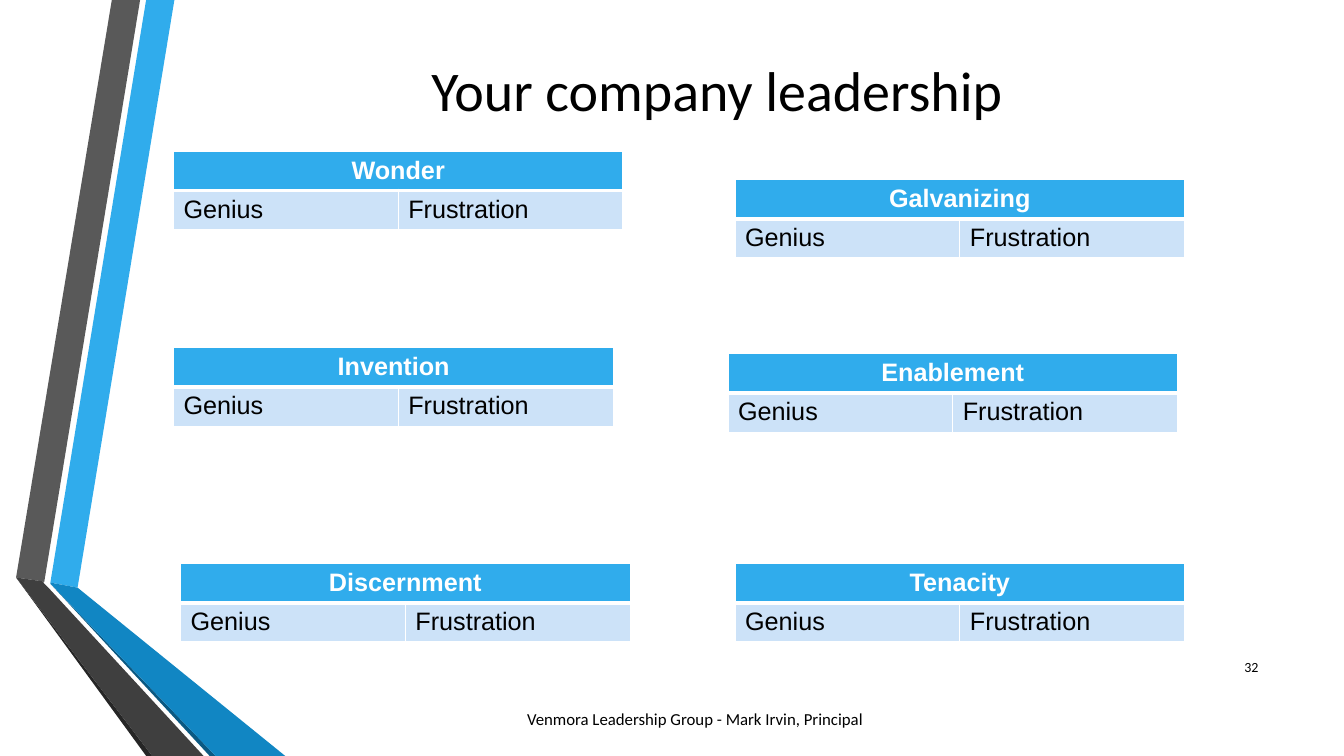
from lxml import etree
from pptx import Presentation
from pptx.dml.color import RGBColor
from pptx.enum.text import MSO_ANCHOR, PP_ALIGN
from pptx.oxml.ns import qn
from pptx.util import Inches, Pt

LEFT, CENTER, RIGHT = PP_ALIGN.LEFT, PP_ALIGN.CENTER, PP_ALIGN.RIGHT
MIDDLE = MSO_ANCHOR.MIDDLE

# Content
BLACK, WHITE = "000000", "FFFFFF"
HEADER_FILL, CELL_FILL = "30ACEC", "CCE2F8"
ROW_HEIGHT, COLUMN_WIDTH = 0.39, 2.23
COLUMN_LABELS = ("Genius", "Frustration")

# Ribbon colour, outline points
RIBBONS = [
    ("30ACEC", [(0.5, 5.78), (0.77, 5.83), (1.73, 0), (1.45, 0)]),
    ("595959", [(1.39, 0), (1.11, 0), (0.16, 5.73), (0.44, 5.77)]),
    ("262626", [(0.16, 5.73), (1.45, 7.5), (1.51, 7.5)]),
    ("0B5982", [(0.5, 5.79), (2.08, 7.5), (2.14, 7.5)]),
    ("1186C3", [(0.5, 5.79), (2.14, 7.5), (2.83, 7.5), (0.77, 5.83), (0.5, 5.78)]),
    ("3F3F3F", [(2.02, 7.5), (0.48, 5.83), (0.43, 5.78), (0.44, 5.77),
                (0.16, 5.73), (1.51, 7.5)]),
]

# Heading, left, top, width of the second column
TABLES = [
    ("Wonder", 1.72, 1.5, COLUMN_WIDTH),
    ("Invention", 1.72, 3.45, 2.14),
    ("Discernment", 1.79, 5.59, COLUMN_WIDTH),
    ("Galvanizing", 7.29, 1.78, COLUMN_WIDTH),
    ("Enablement", 7.22, 3.51, COLUMN_WIDTH),
    ("Tenacity", 7.29, 5.59, COLUMN_WIDTH),
]

# Text, left, top, width, height, size, alignment
LABELS = [
    ("Your company leadership", 1.63, 0.38, 10.96, 1, 40, CENTER),
    ("Venmora Leadership Group - Mark Irvin, Principal", 3.02, 6.93, 7.75, 0.4, 12, CENTER),
    ("32", 11.98, 6.42, 0.6, 0.4, 10, RIGHT),
]


def color(hex_code):
    return RGBColor.from_string(hex_code)


def write(frame, text, size, font, hex_code, align, bold=False):
    para = frame.paragraphs[0]
    para.text = text
    para.alignment = align
    para.font.size = Pt(size)
    para.font.name = font
    para.font.bold = bold
    para.font.color.rgb = color(hex_code)


def add_ribbon(page, fill, points):
    corners = [(Inches(x), Inches(y)) for x, y in points]
    builder = page.shapes.build_freeform(*corners[0])
    builder.add_line_segments(corners[1:], close=True)
    ribbon = builder.convert_to_shape()
    ribbon.fill.solid()
    ribbon.fill.fore_color.rgb = color(fill)
    ribbon.line.fill.background()
    ribbon.shadow.inherit = False


def style_cell(cell, fill, top, bottom):
    properties = cell._tc.get_or_add_tcPr()
    for side, points in (("L", 1), ("R", 1), ("T", top), ("B", bottom)):
        line = etree.SubElement(properties, qn(f"a:ln{side}"), w=str(Pt(points)))
        solid = etree.SubElement(line, qn("a:solidFill"))
        etree.SubElement(solid, qn("a:srgbClr"), val=WHITE)
    cell.fill.solid()
    cell.fill.fore_color.rgb = color(fill)


def add_genius_table(page, heading, left, top, last_width):
    widths = (COLUMN_WIDTH, last_width)
    frame = page.shapes.add_table(2, 2, Inches(left), Inches(top),
                                  Inches(sum(widths)), Inches(2 * ROW_HEIGHT))
    table = frame.table
    for row in table.rows:
        row.height = Inches(ROW_HEIGHT)
    for index, (width, label) in enumerate(zip(widths, COLUMN_LABELS)):
        table.columns[index].width = Inches(width)
        style_cell(table.cell(0, index), HEADER_FILL, 1, 3)
        cell = table.cell(1, index)
        style_cell(cell, CELL_FILL, 3, 1)
        write(cell.text_frame, label, 18, "Arial", BLACK, LEFT)
    header = table.cell(0, 0)
    header.merge(table.cell(0, 1))
    write(header.text_frame, heading, 18, "Arial", WHITE, CENTER, bold=True)


def add_label(page, text, left, top, width, height, size, align):
    box = page.shapes.add_textbox(Inches(left), Inches(top), Inches(width), Inches(height))
    frame = box.text_frame
    frame.word_wrap = True
    frame.vertical_anchor = MIDDLE
    write(frame, text, size, "Calibri", BLACK, align)


def main():
    deck = Presentation()
    deck.slide_width, deck.slide_height = Inches(13.33), Inches(7.5)
    page = deck.slides.add_slide(deck.slide_layouts[6])
    page.background.fill.solid()
    page.background.fill.fore_color.rgb = color(WHITE)

    for ribbon in RIBBONS:
        add_ribbon(page, *ribbon)
    for table in TABLES:
        add_genius_table(page, *table)
    for label in LABELS:
        add_label(page, *label)
    deck.save("out.pptx")


if __name__ == "__main__":
    main()
